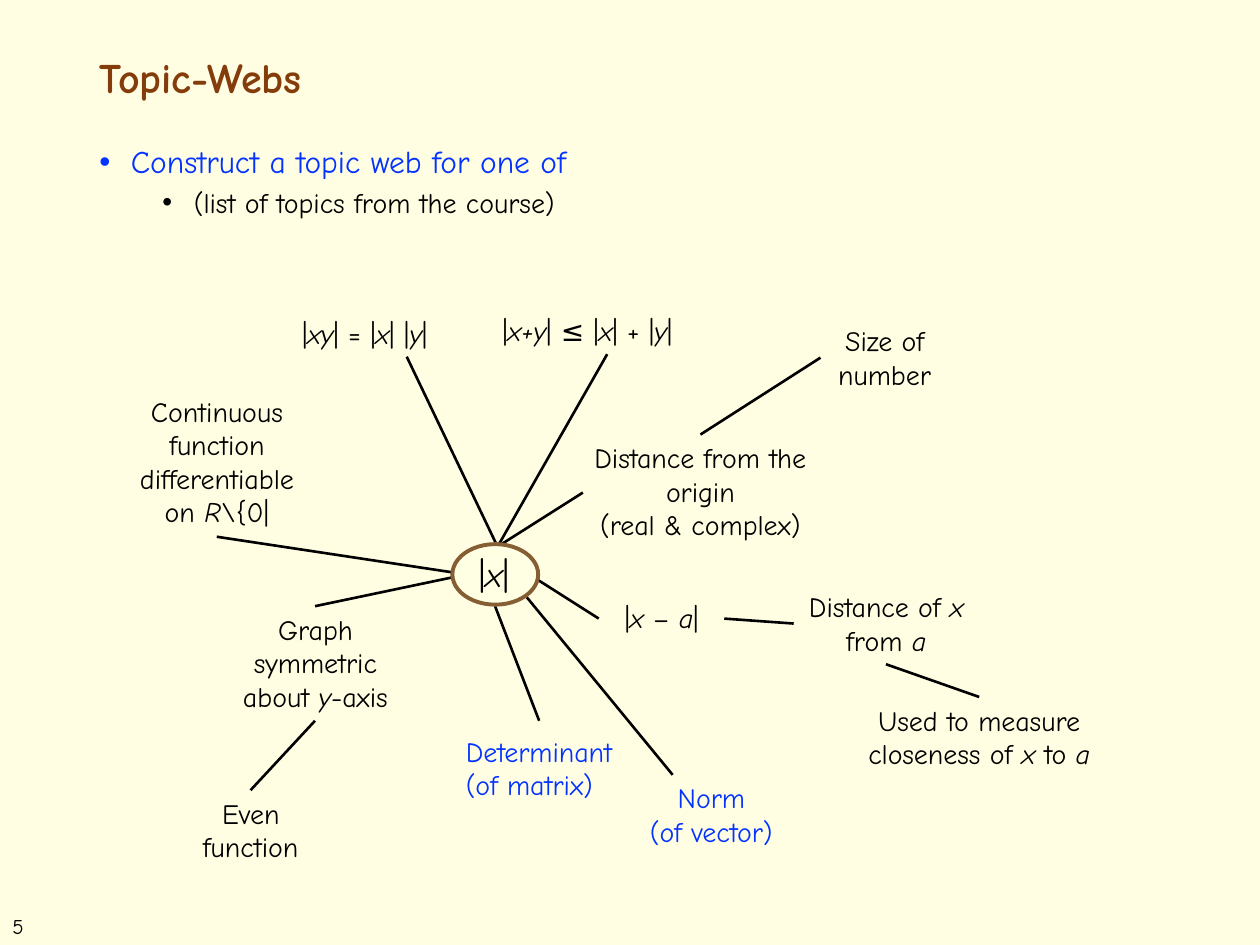
from lxml.etree import SubElement
from pptx import Presentation
from pptx.dml.color import RGBColor
from pptx.enum.shapes import MSO_CONNECTOR, MSO_SHAPE
from pptx.enum.text import MSO_ANCHOR, MSO_AUTO_SIZE, PP_ALIGN
from pptx.oxml.ns import qn
from pptx.util import Cm, Pt

CREAM = RGBColor(0xFF, 0xFE, 0xE3)
PALE = RGBColor(0xFF, 0xFF, 0xE4)
RUST = RGBColor(0x84, 0x3C, 0x0B)
BROWN = RGBColor(0x85, 0x5F, 0x33)
BLUE = RGBColor(0x04, 0x32, 0xFF)
BLACK = RGBColor(0, 0, 0)
FONT = "Comic Neue"
LEFT, MID = PP_ALIGN.LEFT, PP_ALIGN.CENTER


def write(frame, text, size=16, color=BLACK, bold=False, align=LEFT):
    """Add one paragraph per line; text between asterisks is italic."""
    for line in text.split("\n"):
        para = frame.paragraphs[-1]
        if para.runs:
            para = frame.add_paragraph()
        para.alignment = align
        for i, part in enumerate(line.split("*")):
            if part:
                run = para.add_run()
                run.text = part
                font = run.font
                font.name, font.size, font.bold = FONT, Pt(size), bold
                font.italic = i % 2 == 1
                font.color.rgb = color
    return para


class Web:
    """Holds the current slide and draws the parts of a topic web on it."""

    def __init__(self, deck):
        self.slide = deck.slides.add_slide(deck.slide_layouts[1])
        self.shapes = self.slide.shapes
        fill = self.slide.background.fill
        fill.solid()
        fill.fore_color.rgb = CREAM

    def place(self, holder, top, height):
        holder.left, holder.top = Cm(1.75), Cm(top)
        holder.width, holder.height = Cm(21.9), Cm(height)
        frame = holder.text_frame
        frame.auto_size = MSO_AUTO_SIZE.NONE
        frame.vertical_anchor = MSO_ANCHOR.TOP
        return frame

    def title(self, text):
        frame = self.place(self.shapes.title, 1.02, 1.8)
        write(frame, text, 24, RUST, bold=True).line_spacing = 0.9

    def bullets(self, items):
        frame = self.place(self.slide.placeholders[1], 2.82, 2.44)
        for level, (text, size, color) in enumerate(items):
            para = write(frame, text, size, color)
            para.level = level
            para.line_spacing = 0.9
            para.space_before = Pt(10 - 5 * level)
            props = para._p.get_or_add_pPr()
            props.set("marL", str(Cm(0.635 + 1.27 * level)))
            props.set("indent", str(-Cm(0.635)))
            SubElement(props, qn("a:buFont"), typeface="Arial")
            SubElement(props, qn("a:buChar"), char="•")

    def label(self, text, left, top, width, height, wrap=True, **look):
        box = self.shapes.add_textbox(Cm(left), Cm(top), Cm(width), Cm(height))
        frame = box.text_frame
        frame.word_wrap = wrap
        frame.auto_size = MSO_AUTO_SIZE.SHAPE_TO_FIT_TEXT
        write(frame, text, **look)

    def link(self, start, end):
        ends = [Cm(n) for n in (*start, *end)]
        line = self.shapes.add_connector(MSO_CONNECTOR.STRAIGHT, *ends)
        line.line.color.rgb = BLACK
        line.line.width = Pt(1.5)
        SubElement(line._element.spPr, qn("a:effectLst"))

    def oval(self, left, top, width, height):
        ring = self.shapes.add_shape(
            MSO_SHAPE.OVAL, Cm(left), Cm(top), Cm(width), Cm(height))
        ring.shadow.inherit = False
        ring.fill.solid()
        ring.fill.fore_color.rgb = PALE
        ring.line.color.rgb = BROWN
        ring.line.width = Pt(2.25)


TOP, WEST, EAST = (10.03, 11.02), (9.4, 11.58), (10.67, 11.58)
SOUTH, CORNER = (9.98, 12.22), (10.62, 12.04)

LINKS = [
    (WEST, (6.35, 12.22)),
    (WEST, (4.37, 10.82)),
    (EAST, (12.07, 12.47)),
    (TOP, (11.75, 9.93)),
    (TOP, (8.2, 7.19)),
    (TOP, (12.24, 7.14)),
    (SOUTH, (10.87, 14.53)),
    (CORNER, (13.56, 15.62)),
    ((6.35, 14.53), (5.05, 15.93)),
    ((14.12, 8.76), (16.54, 7.21)),
    ((14.6, 12.47), (16, 12.57)),
    ((19.74, 14.05), (17.86, 13.39)),
]

TOPICS = [
    ("Distance from the origin\n(real & complex)", 11.73, 8.76, 4.78, 2.31),
    ("Continuous function differentiable on *R*\\{0|", 2.24, 7.82, 4.27, 3),
    ("Size of number", 16.54, 6.4, 2.59, 1.63),
    ("Even function", 3.76, 15.93, 2.59, 1.63),
    ("Graph symmetric about *y*-axis", 4.39, 12.22, 3.94, 2.31),
    ("|*x*| – *a*|".replace("*x*|", "*x*"), 12.07, 11.99, 2.54, 0.94),
    ("Distance of *x *from *a*", 16, 11.76, 3.73, 1.63),
    ("Used to measure closeness of *x* to *a*", 16.87, 14.05, 5.74, 1.63),
]
TOPICS[5] = ("|*x* – *a*|", *TOPICS[5][1:])


def main():
    deck = Presentation()
    deck.slide_width, deck.slide_height = Cm(25.4), Cm(19.05)
    web = Web(deck)
    web.title("Topic-Webs")
    web.bullets([("Construct a topic web for one of", 18, BLUE),
                 ("(list of topics from the course)", 16, BLACK)])
    for start, end in LINKS:
        web.link(start, end)
    for topic in TOPICS:
        web.label(*topic, align=MID)
    web.label("|*xy*| = |*x*| |*y*|", 5.84, 6.25, 4.72, 0.94)
    web.label("|*x+y*| ≤ |*x*| + |*y*|", 9.88, 6.2, 4.72, 0.94)
    web.oval(9.12, 10.97, 1.73, 1.22)
    web.label("|*x*|", 9.4, 11.02, 1.27, 1.12, wrap=False, size=20)
    web.label("Determinant\n(of matrix)", 9.14, 14.68, 3.66, 1.63,
              wrap=False, color=BLUE)
    web.label("Norm\n(of vector)", 12.75, 15.62, 3.18, 1.63,
              wrap=False, color=BLUE, align=MID)
    web.label("5", 0, 18.29, 1.3, 0.76, size=12)
    deck.save("out.pptx")


if __name__ == "__main__":
    main()
